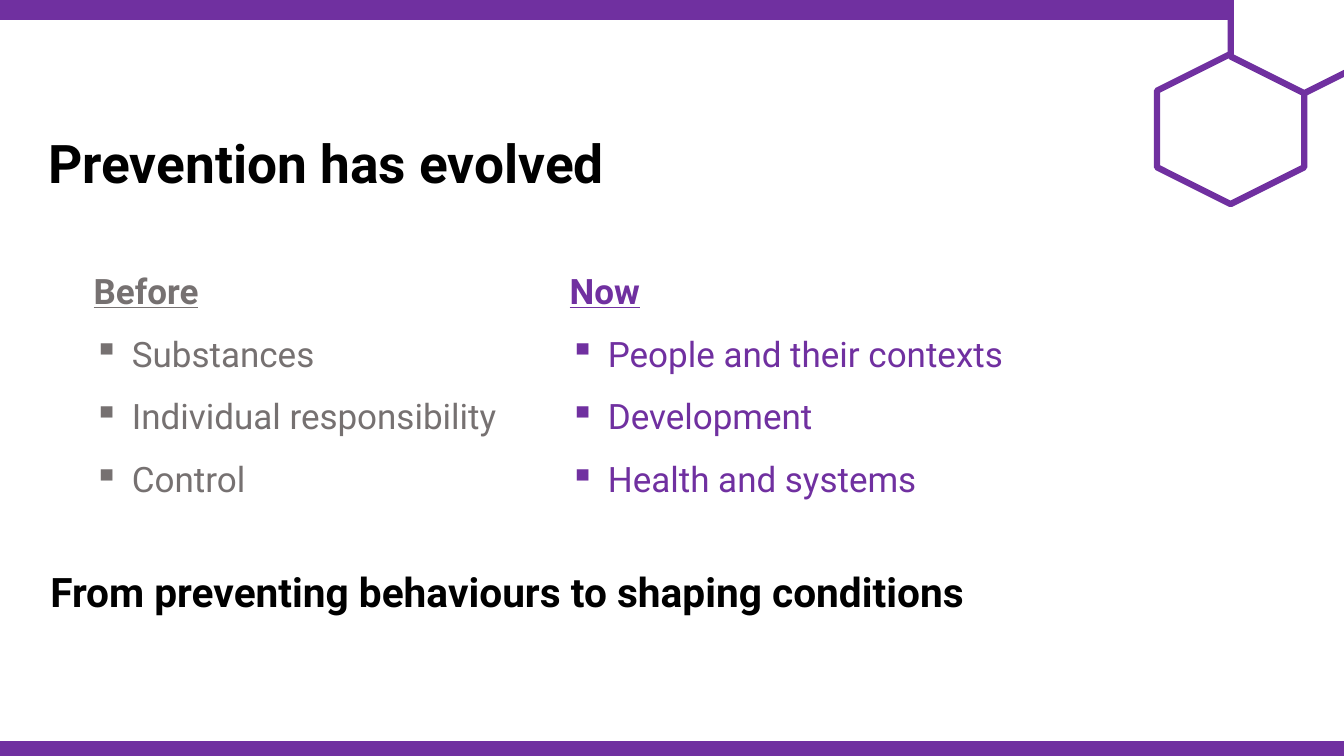
"""Build a slide that contrasts earlier and present views of prevention."""
from lxml import etree
from pptx import Presentation
from pptx.dml.color import RGBColor
from pptx.enum.shapes import MSO_SHAPE
from pptx.enum.text import MSO_ANCHOR, PP_ALIGN
from pptx.oxml.ns import qn
from pptx.util import Inches, Pt

RECTANGLE = MSO_SHAPE.RECTANGLE
HEXAGON = MSO_SHAPE.HEXAGON
MIDDLE = MSO_ANCHOR.MIDDLE
LEFT = PP_ALIGN.LEFT
JUSTIFY = PP_ALIGN.JUSTIFY
PURPLE, GREY, BLACK, WHITE = "7030A0", "767171", "000000", "FFFFFF"
BULLET_INDENT = Inches(0.38)

presentation = Presentation()
presentation.slide_width = Inches(13.33)
presentation.slide_height = Inches(7.5)
slide = presentation.slides.add_slide(presentation.slide_layouts[6])


def color(hex_string):
    """Return the colour for a hex string."""
    return RGBColor.from_string(hex_string)


def place(left, top, width, height):
    """Turn percentages of the slide's size into lengths."""
    column = presentation.slide_width / 100
    row = presentation.slide_height / 100
    return [round(length) for length in
            (left * column, top * row, width * column, height * row)]


bars = [
    (RECTANGLE, (0, 0, 100, 2.53), 0, PURPLE, 1),
    (RECTANGLE, (0, 98.13, 100, 1.87), 0, PURPLE, 1),
]
text_boxes = [
    ((2.85, 12, 86.72, 14.67), "Prevention has evolved", [], 38, BLACK, LEFT),
    ((6.23, 42.13, 37.66, 14.67), "Before",
     ["Substances", "Individual responsibility", "Control"], 25, GREY, LEFT),
    ((41.64, 42.13, 40.14, 14.67), "Now",
     ["People and their contexts", "Development", "Health and systems"],
     25, PURPLE, LEFT),
    ((3, 71.87, 83.12, 9.33),
     "From preventing behaviours to shaping conditions", [], 29, BLACK, JUSTIFY),
]
hexagons = [
    (HEXAGON, (left, top, 11.18, 19.47), 90, WHITE, 4.5)
    for left, top in [(85.97, 7.33), (91.45, -7.33)]
]

for kind, area, rotation, fill, line_width in bars + hexagons:
    shape = slide.shapes.add_shape(kind, *place(*area))
    shape.shadow.inherit = False
    shape.rotation = rotation
    shape.fill.solid()
    shape.fill.fore_color.rgb = color(fill)
    shape.line.color.rgb = color(PURPLE)
    shape.line.width = Pt(line_width)

for area, heading, items, size, text_color, alignment in text_boxes:
    frame = slide.shapes.add_textbox(*place(*area)).text_frame
    frame.word_wrap = True
    frame.vertical_anchor = MIDDLE
    for index, text in enumerate([heading] + items):
        is_heading = index == 0
        paragraph = frame.paragraphs[0] if is_heading else frame.add_paragraph()
        paragraph.alignment = alignment
        paragraph.line_spacing = 1.5
        if not is_heading:
            properties = paragraph._p.get_or_add_pPr()
            properties.set("marL", str(BULLET_INDENT))
            properties.set("indent", str(-BULLET_INDENT))
            etree.SubElement(properties, qn("a:buChar")).set("char", "▪")
        run = paragraph.add_run()
        run.text = text
        run.font.name = "Roboto"
        run.font.size = Pt(size)
        run.font.bold = is_heading
        run.font.underline = is_heading and bool(items)
        run.font.color.rgb = color(text_color)

presentation.save("out.pptx")
